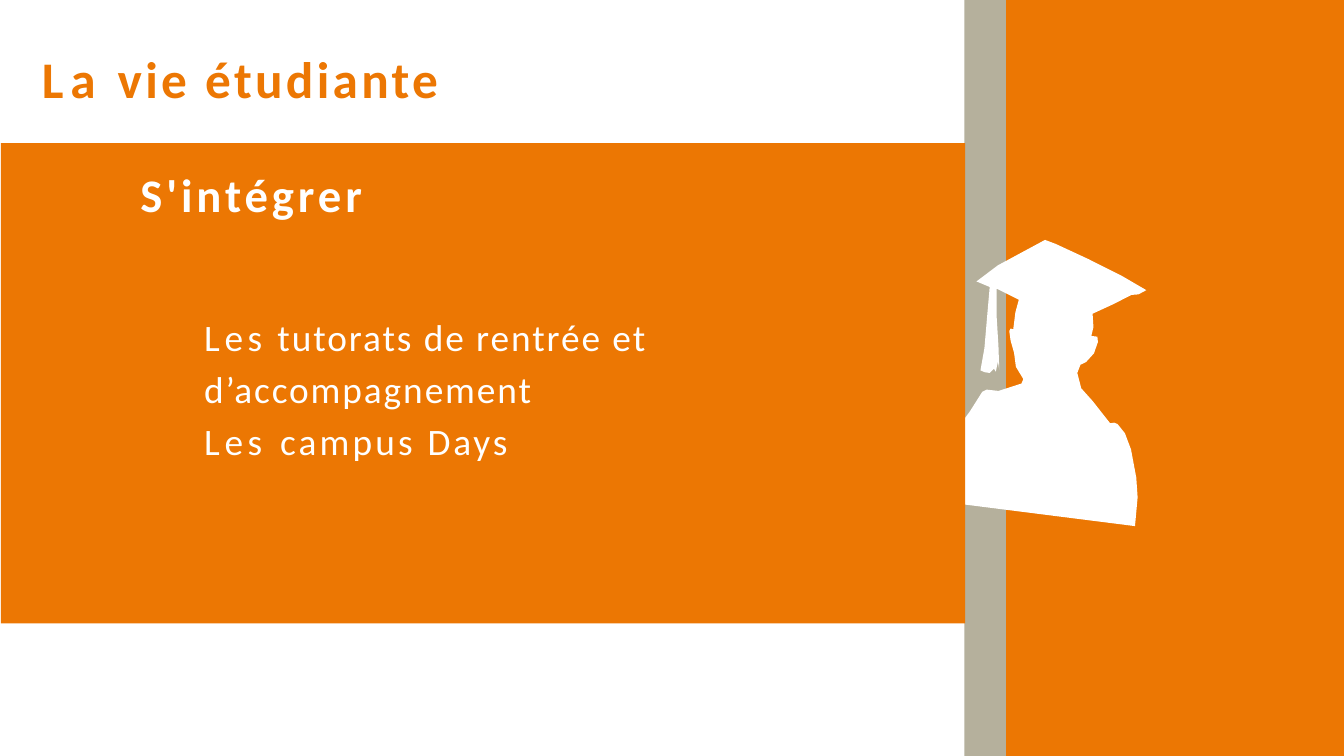
import pptx
import pptx.util
import pptx.dml.color
import pptx.enum.shapes
import pptx.enum.text
import pptx.oxml
import pptx.oxml.ns

Cm = pptx.util.Cm
Pt = pptx.util.Pt

COLORS = {"orange": "EC7703", "stone": "B5B09C", "white": "FFFFFF"}
FONT = "Calibri"

CAP = [
    (36.91, 10.64), (37.72, 10.03), (39.5, 9.07), (39.9, 9.22), (41.15, 9.8),
    (42.42, 10.44), (43.33, 10.97), (43.03, 11.13), (42.77, 11.15),
    (42.06, 11.51), (37.67, 10.92), (37.67, 11.94), (37.74, 13.08),
    (37.77, 13.97), (37.72, 13.67), (37.64, 14.05), (37.57, 13.94),
    (37.41, 14.1), (37.21, 14.07), (37.06, 14), (37.21, 13.16),
    (37.31, 11.99), (37.41, 10.85),
]
BUST = [
    (42.9, 19.89), (35.08, 18.9), (35.23, 18.11), (35.51, 17.3),
    (35.97, 16.48), (36.65, 15.57), (37.13, 14.81), (37.29, 14.73),
    (37.74, 14.78), (38.61, 14.5), (38.68, 14.33), (38.4, 13.87),
    (38.33, 13.34), (38.2, 12.88), (38.15, 12.52), (38.2, 12.42),
    (38.3, 12.45), (38.38, 11.81), (38.51, 11.33), (37.69, 10.92),
    (42.06, 11.51), (41.3, 11.86), (41.33, 12.37), (41.25, 12.7),
    (41.48, 12.73), (41.5, 12.93), (41.35, 13.36), (41.05, 13.69),
    (40.84, 13.79), (40.72, 14.1), (40.87, 14.68), (41.3, 15.16),
    (41.96, 16), (42.11, 15.98), (42.24, 16.03), (42.52, 16.38),
    (42.75, 16.99), (42.95, 18.06), (43, 18.8), (42.93, 19.58),
]


def rgb(name):
    return pptx.dml.color.RGBColor.from_string(COLORS[name])


def paint(sp, color):
    sp.fill.solid()
    sp.fill.fore_color.rgb = rgb(color)
    sp.line.fill.background()
    sp.shadow.inherit = False


def add_block(s, color, x, y, w, h):
    sp = s.shapes.add_shape(
        pptx.enum.shapes.MSO_SHAPE.RECTANGLE, Cm(x), Cm(y), Cm(w), Cm(h))
    paint(sp, color)


def add_outline(s, color, contours):
    builder = None
    for contour in contours:
        points = [(Cm(x), Cm(y)) for x, y in contour]
        if builder is None:
            builder = s.shapes.build_freeform(*points[0])
        else:
            builder.move_to(*points[0])
        builder.add_line_segments(points[1:], close=True)
    paint(builder.convert_to_shape(), color)


def place_text(s, sp, x, y, w, h):
    s.shapes._spTree.append(sp._element)
    sp.left, sp.top, sp.width, sp.height = Cm(x), Cm(y), Cm(w), Cm(h)
    tf = sp.text_frame
    tf.word_wrap = True
    tf.auto_size = pptx.enum.text.MSO_AUTO_SIZE.NONE
    tf.vertical_anchor = pptx.enum.text.MSO_ANCHOR.TOP
    tf.margin_left = tf.margin_right = tf.margin_bottom = 0
    tf.margin_top = Cm(0.03)
    return tf


def fill_paragraph(p, runs, size, color, bold=False, indent=0.03, before=1, line=1):
    p.alignment = pptx.enum.text.PP_ALIGN.LEFT
    p.space_before = Pt(before)
    p.line_spacing = line
    pPr = p._p.get_or_add_pPr()
    pPr.set("marL", str(Cm(indent)))
    pPr.set("indent", "0")
    pPr.append(pptx.oxml.parse_xml(
        "<a:buNone %s/>" % pptx.oxml.ns.nsdecls("a")))
    for text, spacing in runs:
        r = p.add_run()
        r.text = text
        r.font.name = FONT
        r.font.size = Pt(size)
        r.font.bold = bold
        r.font.color.rgb = rgb(color)
        r._r.get_or_add_rPr().set("spc", str(round(spacing * 100)))


def main():
    prs = pptx.Presentation()
    prs.slide_width, prs.slide_height = Cm(50.8), Cm(28.58)
    s = prs.slides.add_slide(prs.slide_layouts[1])

    add_block(s, "orange", 38.02, 0, 12.78, 28.58)
    add_block(s, "stone", 36.45, 0, 1.57, 28.58)
    add_outline(s, "white", [CAP, BUST])
    add_block(s, "orange", 0.03, 5.41, 36.45, 18.16)

    tf = place_text(s, s.shapes.title, 1.55, 1.75, 17, 2.39)
    fill_paragraph(tf.paragraphs[0], [("La", 7.5), (" vie étudiante", 3.6)],
                   55, "orange", bold=True)

    tf = place_text(s, s.placeholders[1], 5.28, 6.25, 27.74, 11.4)
    fill_paragraph(tf.paragraphs[0], [("S'intégrer", 4.2)],
                   50, "white", bold=True)
    items = [
        ([("Les", 5), (" tutorats de rentrée et d’accompagnement", 2.1)], 91),
        ([("Les ", 5), ("campus ", 3.4), ("Days", 3.1)], 0),
    ]
    for runs, before in items:
        fill_paragraph(tf.add_paragraph(), runs, 40, "white",
                       indent=2.44, before=before, line=1.16)

    prs.save("out.pptx")


if __name__ == "__main__":
    main()
